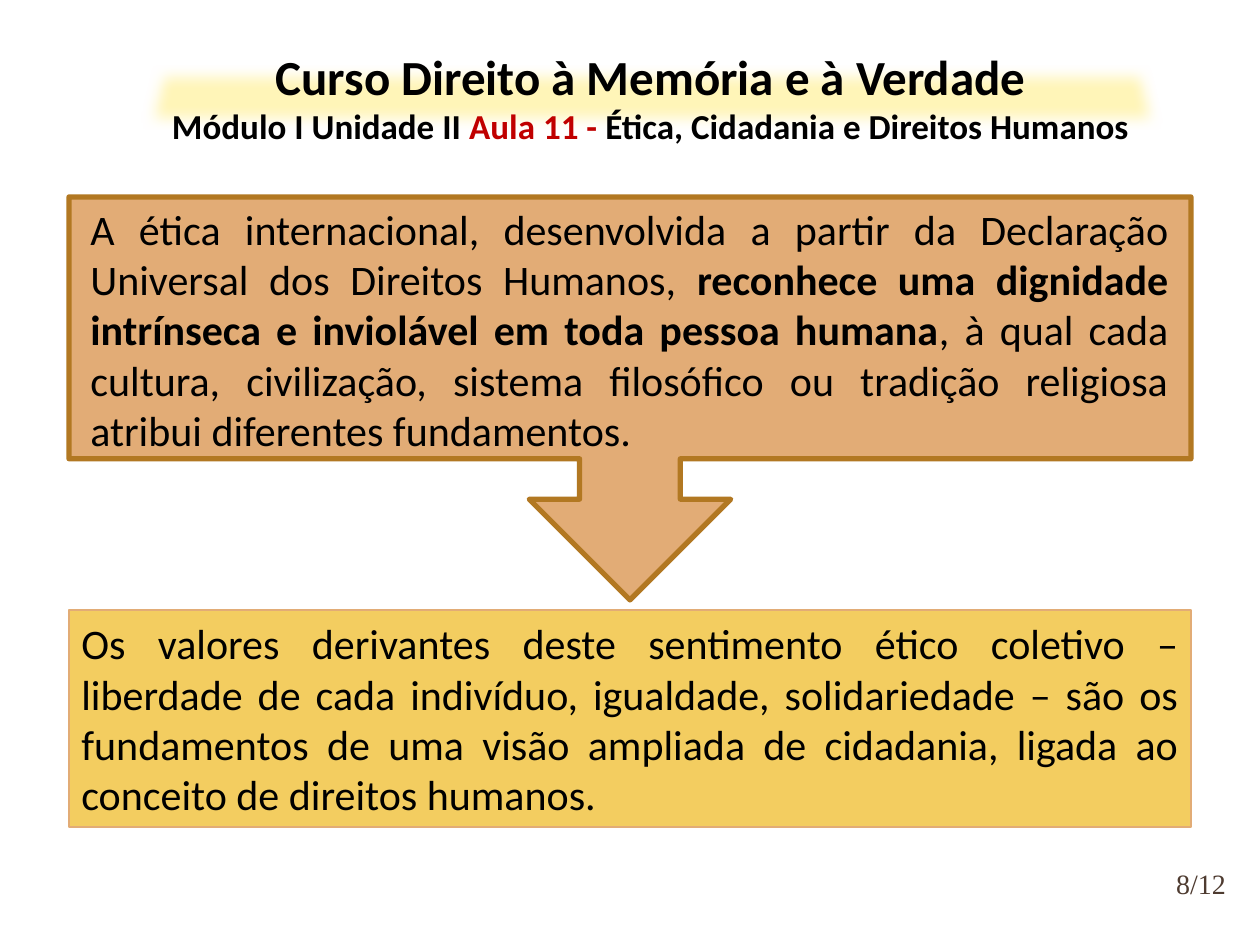
"""Build the slide on international ethics and human dignity."""
from lxml.etree import SubElement
from pptx import Presentation
from pptx.dml.color import RGBColor
from pptx.enum.shapes import MSO_SHAPE as SHAPE
from pptx.enum.text import MSO_ANCHOR as ANCHOR, PP_ALIGN as ALIGN
from pptx.oxml.ns import qn
from pptx.util import Emu, Pt

PX = 914400 / 126
COLORS = {"black": "000000", "red": "C00000", "brown": "4E3B30", "sand": "E2AC76",
          "ochre": "B27822", "yellow": "F3CD60", "glow": "FFF5B8"}

BODY = {"size": 24}
TITLE = {"size": 28, "bold": True}
SUBTITLE = {"size": 20, "bold": True}
NUMBER = {"size": 16, "name": "Times New Roman", "color": "brown"}

SHAPES = [
    (SHAPE.RECTANGLE, (69, 610, 1122, 217), "yellow", "sand", 0.75),
    (SHAPE.DOWN_ARROW_CALLOUT, (69, 197, 1122, 403), "sand", "ochre", 3),
]
GLOW = (SHAPE.TRAPEZOID, (136, 66, 1030, 64), "glow", None, 0)

TEXTS = [
    ((1159, 852, 84, 63), ALIGN.CENTER, ANCHOR.MIDDLE, 0, [[("8/12", NUMBER)]]),
    ((69, 610, 1122, 217), ALIGN.JUSTIFY, ANCHOR.MIDDLE, 1, [[
        ("Os valores derivantes deste sentimento ético coletivo – liberdade de cada "
         "indivíduo, igualdade, solidariedade – são os fundamentos de uma visão "
         "ampliada de cidadania, ligada ao conceito de direitos humanos.", BODY)]]),
    ((78, 197, 1103, 267), ALIGN.JUSTIFY, ANCHOR.TOP, 1, [[
        ("A ética internacional, desenvolvida a partir da Declaração Universal dos "
         "Direitos Humanos, ", BODY),
        ("reconhece uma dignidade intrínseca e inviolável em toda pessoa humana",
         {**BODY, "bold": True}),
        (", à qual cada cultura, civilização, sistema filosófico ou tradição "
         "religiosa atribui diferentes fundamentos.", BODY)]]),
    ((129, 39, 1043, 115), ALIGN.CENTER, ANCHOR.MIDDLE, 1, [
        [("Curso Direito à Memória e à Verdade", TITLE)],
        [("Módulo I Unidade II ", SUBTITLE),
         ("Aula 11 - ", {**SUBTITLE, "color": "red"}),
         ("Ética, Cidadania e Direitos Humanos", SUBTITLE)]]),
]


def px(*values):
    return [Emu(round(v * PX)) for v in values]


def rgb(name):
    return RGBColor.from_string(COLORS[name])


def add_panel(s, kind, box, fill, line, width):
    sp = s.shapes.add_shape(kind, *px(*box))
    sp.shadow.inherit = False
    sp.fill.solid()
    sp.fill.fore_color.rgb = rgb(fill)
    if line:
        sp.line.color.rgb = rgb(line)
        sp.line.width = Pt(width)
        SubElement(sp.line._get_or_add_ln(), qn("a:round"))
    else:
        sp.line.fill.background()
    return sp


def add_text(s, box, align, anchor, inset, paragraphs):
    tf = s.shapes.add_textbox(*px(*box)).text_frame
    tf.word_wrap, tf.vertical_anchor = True, anchor
    if not inset:
        for side in ("left", "top", "right", "bottom"):
            setattr(tf, f"margin_{side}", 0)
    for i, runs in enumerate(paragraphs):
        p = tf.paragraphs[0] if i == 0 else tf.add_paragraph()
        p.alignment = align
        for text, style in runs:
            r = p.add_run()
            r.text = text
            look = {"name": "Calibri", "bold": False, "color": "black", **style}
            r.font.color.rgb = rgb(look.pop("color"))
            look["size"] = Pt(look["size"])
            for key, value in look.items():
                setattr(r.font, key, value)


def main():
    prs = Presentation()
    prs.slide_width, prs.slide_height = px(1260, 945)
    s = prs.slides.add_slide(prs.slide_layouts[6])
    for shape in SHAPES:
        add_panel(s, *shape)
    glow = add_panel(s, *GLOW)
    effects = glow._element.spPr.find(qn("a:effectLst"))
    SubElement(effects, qn("a:softEdge"), rad=str(px(14)[0]))
    for text in TEXTS:
        add_text(s, *text)
    prs.save("out.pptx")


if __name__ == "__main__":
    main()
